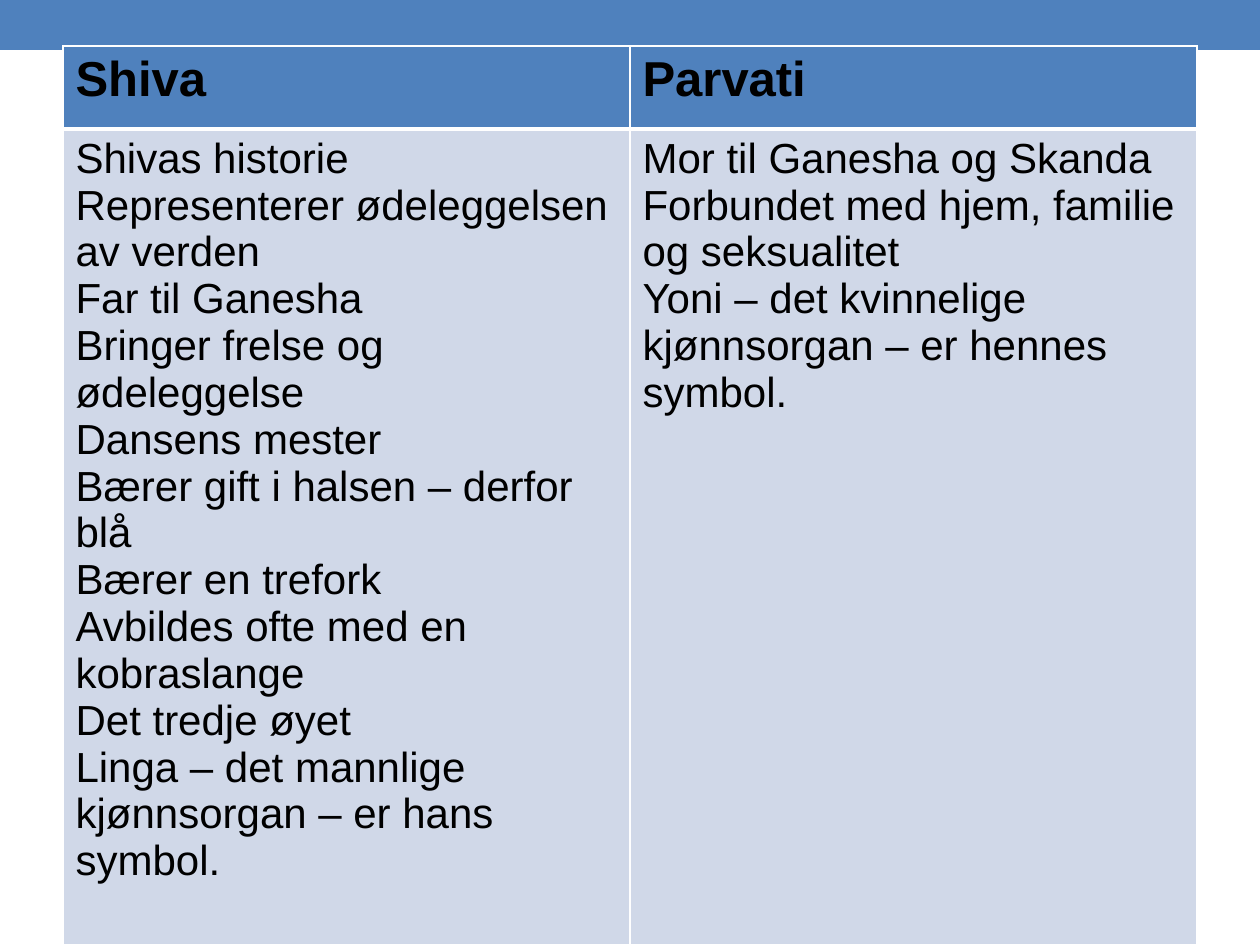
from lxml.etree import SubElement
from pptx import Presentation
from pptx.dml.color import RGBColor
from pptx.enum.shapes import MSO_SHAPE as Shape
from pptx.oxml.ns import qn
from pptx.util import Emu, Pt

EMU_PER_PX = 914400 / 126
BLUE = RGBColor(0x4F, 0x81, 0xBD)
PALE_BLUE = RGBColor(0xD0, 0xD8, 0xE8)
BLACK = RGBColor(0, 0, 0)
WHITE = RGBColor(0xFF, 0xFF, 0xFF)

HEADINGS = ["Shiva", "Parvati"]
SHIVA_FACTS = [
    "Shivas historie",
    "Representerer ødeleggelsen av verden",
    "Far til Ganesha",
    "Bringer frelse og ødeleggelse",
    "Dansens mester",
    "Bærer gift i halsen – derfor blå",
    "Bærer en trefork",
    "Avbildes ofte med en kobraslange",
    "Det tredje øyet",
    "Linga – det mannlige kjønnsorgan – er hans symbol.",
]
PARVATI_FACTS = [
    "Mor til Ganesha og Skanda",
    "Forbundet med hjem, familie og seksualitet",
    "Yoni – det kvinnelige kjønnsorgan – er hennes symbol.",
]


def px(length):
    """Convert pixels to EMU."""
    return Emu(round(length * EMU_PER_PX))


def add_top_band(slide):
    """Draw the blue band along the top edge."""
    band = slide.shapes.add_shape(Shape.RECTANGLE, 0, 0, px(1260), px(50))
    band.shadow.inherit = False
    band.fill.solid()
    band.fill.fore_color.rgb = BLUE
    band.line.fill.background()


def set_borders(cell, bottom_width):
    """Give a cell white borders, placed before its fill."""
    properties = cell._tc.get_or_add_tcPr()
    widths = {"a:lnL": 1, "a:lnR": 1, "a:lnT": 1, "a:lnB": bottom_width}
    for position, (tag, width) in enumerate(widths.items()):
        line = SubElement(properties, qn(tag), w=str(Pt(width)))
        fill = SubElement(line, qn("a:solidFill"))
        SubElement(fill, qn("a:srgbClr"), val=str(WHITE))
        properties.insert(position, line)


def fill_cell(cell, lines, size, bold, color, bottom_width):
    """Write one paragraph per line and style the cell."""
    cell.text = "\n".join(lines)
    for paragraph in cell.text_frame.paragraphs:
        paragraph.font.name = "Arial"
        paragraph.font.size = Pt(size)
        paragraph.font.bold = bold
        paragraph.font.color.rgb = BLACK
    cell.fill.solid()
    cell.fill.fore_color.rgb = color
    set_borders(cell, bottom_width)


def add_deity_table(slide):
    """Add the table that compares the two deities."""
    frame = slide.shapes.add_table(2, 2, px(63), px(46), px(1134), px(899))
    table = frame.table
    table.rows[0].height = px(83)
    table.rows[1].height = px(816)
    for column, facts in enumerate([SHIVA_FACTS, PARVATI_FACTS]):
        fill_cell(table.cell(0, column), [HEADINGS[column]], 28, True, BLUE, 3)
        fill_cell(table.cell(1, column), facts, 24, False, PALE_BLUE, 1)


def main():
    """Build and save the slide."""
    presentation = Presentation()
    presentation.slide_width = px(1260)
    presentation.slide_height = px(945)
    slide = presentation.slides.add_slide(presentation.slide_layouts[6])
    add_top_band(slide)
    add_deity_table(slide)
    presentation.save("out.pptx")


if __name__ == "__main__":
    main()
